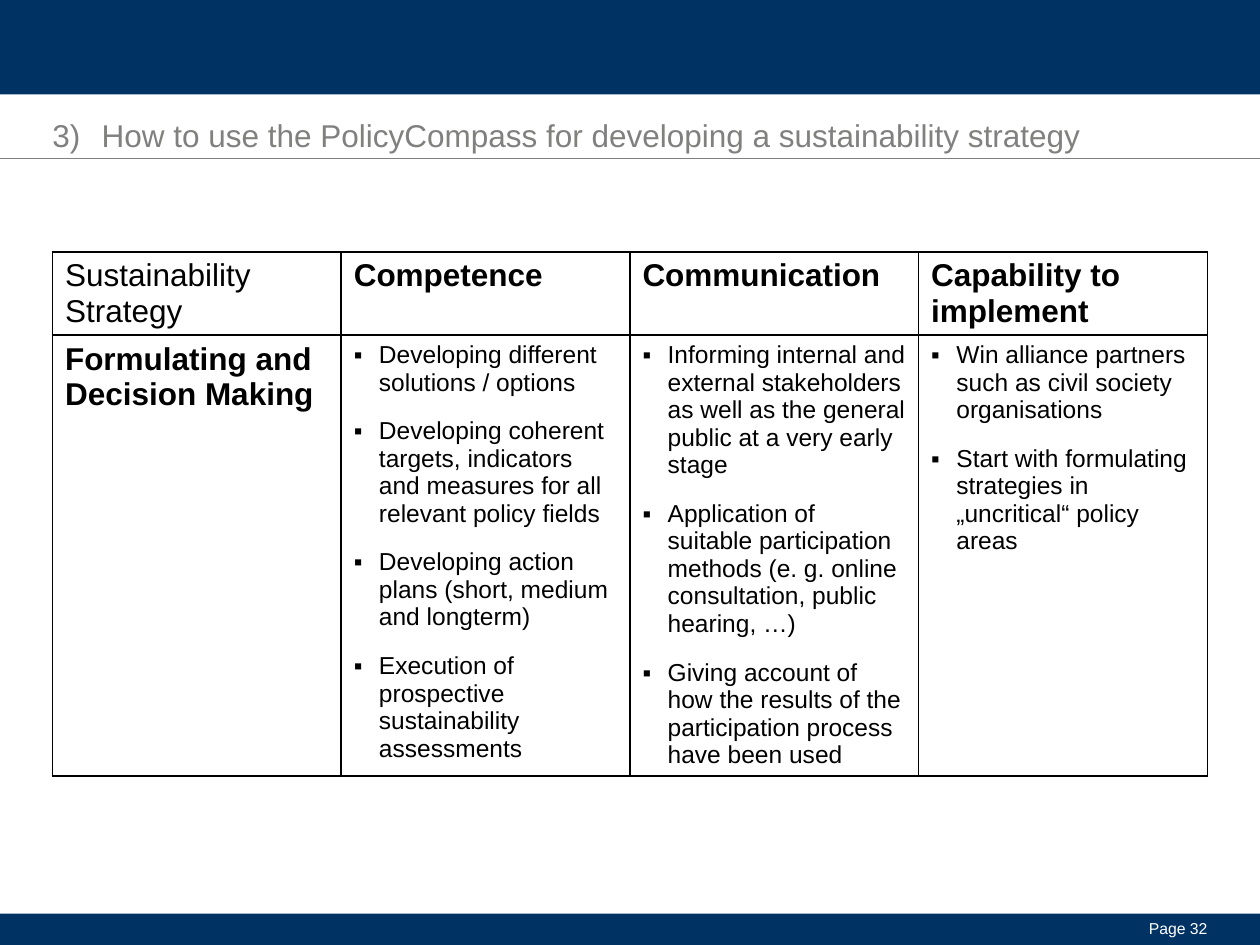
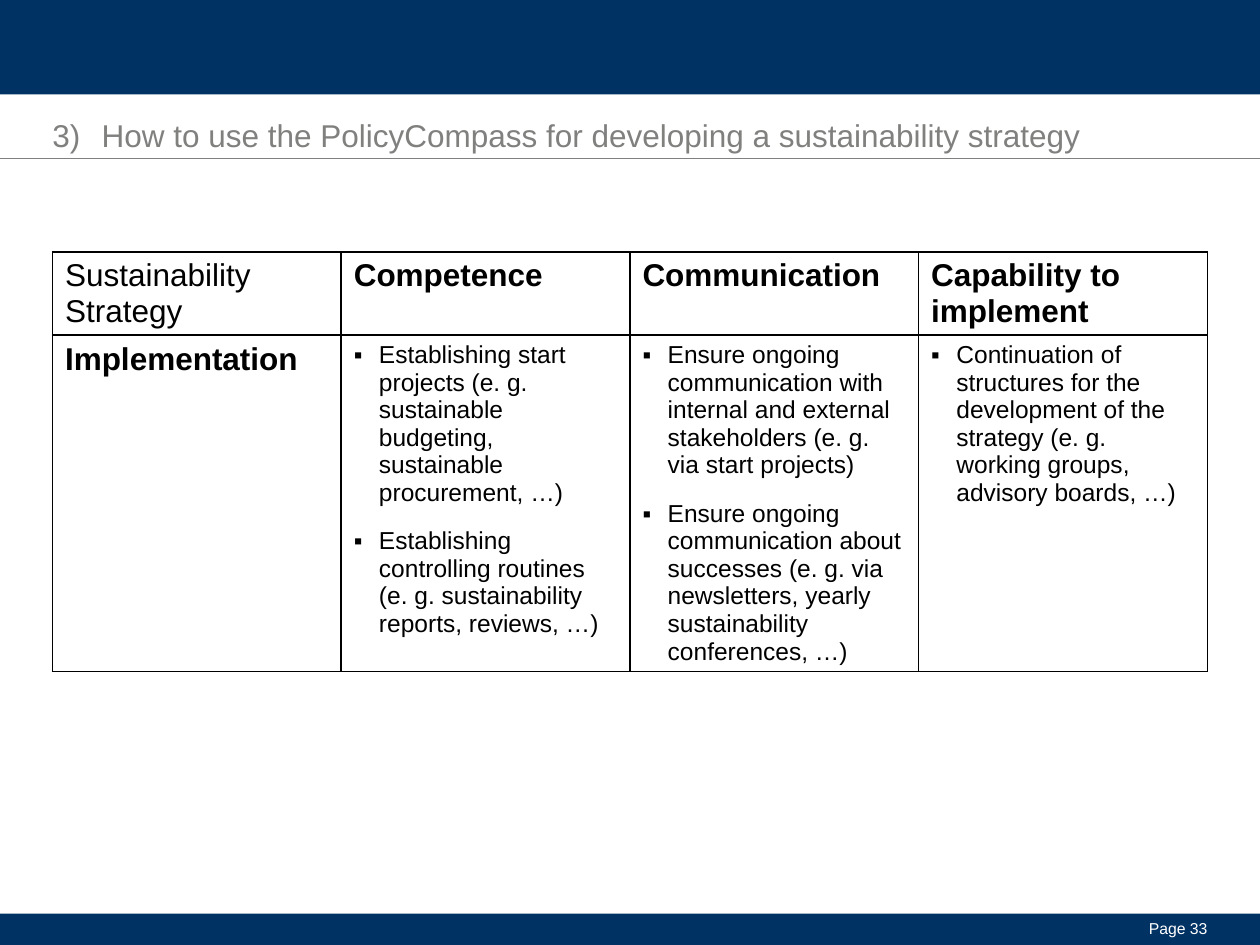
import pptx
import pptx.dml.color
import pptx.enum.shapes
import pptx.enum.text
import pptx.oxml
import pptx.oxml.ns
import pptx.util

NAVY = pptx.dml.color.RGBColor(0x00, 0x32, 0x64)
GREY = pptx.dml.color.RGBColor(0x80, 0x80, 0x7F)
BLACK = pptx.dml.color.RGBColor(0x00, 0x00, 0x00)
WHITE = pptx.dml.color.RGBColor(0xFF, 0xFF, 0xFF)
FONT = "Arial"
WIDTH, HEIGHT = pptx.util.Inches(10), pptx.util.Inches(7.5)
COL, ROW = WIDTH / 24, HEIGHT / 30
TITLE_BOX = (1, 3.68, 22, 1.68)
PAGE_BOX = (21.2, 29.16, 1.8, 0.76)
HEADER_ROWS = 2.64
TITLE = "3)\tHow to use the PolicyCompass for developing a sustainability strategy"
HEADINGS = ["Sustainability Strategy", "Competence", "Communication", "Capability to implement"]
STAGES = [
    (32, "Formulating and Decision Making", 16.64, [
        ["Developing different solutions / options",
         "Developing coherent targets, indicators and measures for all relevant policy fields",
         "Developing action plans (short, medium and longterm)",
         "Execution of prospective sustainability assessments"],
        ["Informing internal and external stakeholders as well as the general public at a very early stage",
         "Application of suitable participation methods (e. g. online consultation, public hearing, …)",
         "Giving account of how the results of the participation process have been used"],
        ["Win alliance partners such as civil society organisations",
         "Start with formulating strategies in „uncritical“ policy areas"]]),
    (33, "Implementation", 13.32, [
        ["Establishing start projects (e. g. sustainable budgeting, sustainable procurement, …)",
         "Establishing controlling routines (e. g. sustainability reports, reviews, …)"],
        ["Ensure ongoing communication with internal and external stakeholders (e. g. via start projects)",
         "Ensure ongoing communication about successes (e. g. via newsletters, yearly sustainability "
         "conferences, …)"],
        ["Continuation of structures for the development of the strategy (e. g. working groups, "
         "advisory boards, …)"]]),
]


def grid(left, top, width, height):
    """Turn columns and rows of the slide grid into lengths."""
    return [int(n) for n in (left * COL, top * ROW, width * COL, height * ROW)]


def child(parent, tag, **attrs):
    """Append a DrawingML element to a parent."""
    el = pptx.oxml.parse_xml(f"<a:{tag} {pptx.oxml.ns.nsdecls('a')}/>")
    for name, value in attrs.items():
        el.set(name, str(value))
    parent.append(el)
    return el


def write(tf, *lines, size=18, bold=False, color=BLACK, align=None, indent=0, bullet=None, after=None):
    """Write one paragraph per line in a single format."""
    for i, line in enumerate(lines):
        p = tf.paragraphs[0] if i == 0 else tf.add_paragraph()
        if indent:
            pPr = p._p.get_or_add_pPr()
            pPr.set("marL", str(pptx.util.Inches(indent)))
            pPr.set("indent", str(-pptx.util.Inches(indent)))
            if bullet:
                child(pPr, "buFont", typeface=FONT)
                child(pPr, "buChar", char=bullet)
        if align is not None:
            p.alignment = align
        if after is not None:
            p.space_after = pptx.util.Pt(after)
        r = p.add_run()
        r.text = line
        r.font.name, r.font.size, r.font.bold = FONT, pptx.util.Pt(size), bold
        r.font.color.rgb = color


def plain_frame(sp):
    """Give a text shape no insets and anchor its text at the top."""
    tf = sp.text_frame
    tf.margin_left = tf.margin_right = tf.margin_top = tf.margin_bottom = 0
    tf.word_wrap = True
    tf.auto_size = pptx.enum.text.MSO_AUTO_SIZE.NONE
    tf.vertical_anchor = pptx.enum.text.MSO_ANCHOR.TOP
    return tf


def add_band(s, box):
    """Add a navy band."""
    sp = s.shapes.add_shape(pptx.enum.shapes.MSO_SHAPE.RECTANGLE, *grid(*box))
    sp.shadow.inherit = False
    sp.fill.solid()
    sp.fill.fore_color.rgb = NAVY
    sp.line.fill.background()


def add_frame(s, page):
    """Add the bands, title, title rule and page number."""
    add_band(s, (0, 29, 24, 1))
    add_band(s, (0, 0, 24, 3))
    x, y, w, _ = grid(0, 5.04, 24, 0)
    rule = s.shapes.add_connector(pptx.enum.shapes.MSO_CONNECTOR.STRAIGHT, x, y, x + w, y)
    rule.line.color.rgb, rule.line.width = GREY, pptx.util.Pt(0.5)
    child(rule._element.spPr, "effectLst")
    write(plain_frame(s.shapes.add_textbox(*grid(*PAGE_BOX))), f"Page {page}", size=9,
          color=WHITE, align=pptx.enum.text.PP_ALIGN.RIGHT)
    title = s.shapes.title
    title.left, title.top, title.width, title.height = grid(*TITLE_BOX)
    write(plain_frame(title), TITLE, color=GREY, align=pptx.enum.text.PP_ALIGN.LEFT, indent=0.39)


def format_cell(cell):
    """Give a cell a white fill and thin black borders."""
    tcPr = cell._tc.get_or_add_tcPr()
    for side in "LRTB":
        ln = child(tcPr, f"ln{side}", w=pptx.util.Pt(1))
        child(child(ln, "solidFill"), "srgbClr", val=BLACK)
    cell.fill.solid()
    cell.fill.fore_color.rgb = WHITE


def add_stage_table(s, box, stage, actions):
    """Add the table of one strategy stage in the given box."""
    table = s.shapes.add_table(2, len(HEADINGS), *grid(*box)).table
    table.first_row = table.horz_banding = False
    table.rows[0].height = int(HEADER_ROWS * ROW)
    table.rows[1].height = int((box[3] - HEADER_ROWS) * ROW)
    for cell in table.iter_cells():
        format_cell(cell)
    for i, heading in enumerate(HEADINGS):
        write(table.cell(0, i).text_frame, heading, bold=i > 0)
    write(table.cell(1, 0).text_frame, stage, bold=True)
    for i, items in enumerate(actions, 1):
        write(table.cell(1, i).text_frame, *items, size=14, indent=0.2, bullet="▪", after=12)


def main():
    """Build one slide per strategy stage."""
    prs = pptx.Presentation()
    prs.slide_width, prs.slide_height = WIDTH, HEIGHT
    for page, stage, rows, actions in STAGES:
        s = prs.slides.add_slide(prs.slide_layouts[5])
        add_frame(s, page)
        add_stage_table(s, (1, 8, 22, rows), stage, actions)
    prs.save("out.pptx")


if __name__ == "__main__":
    main()
